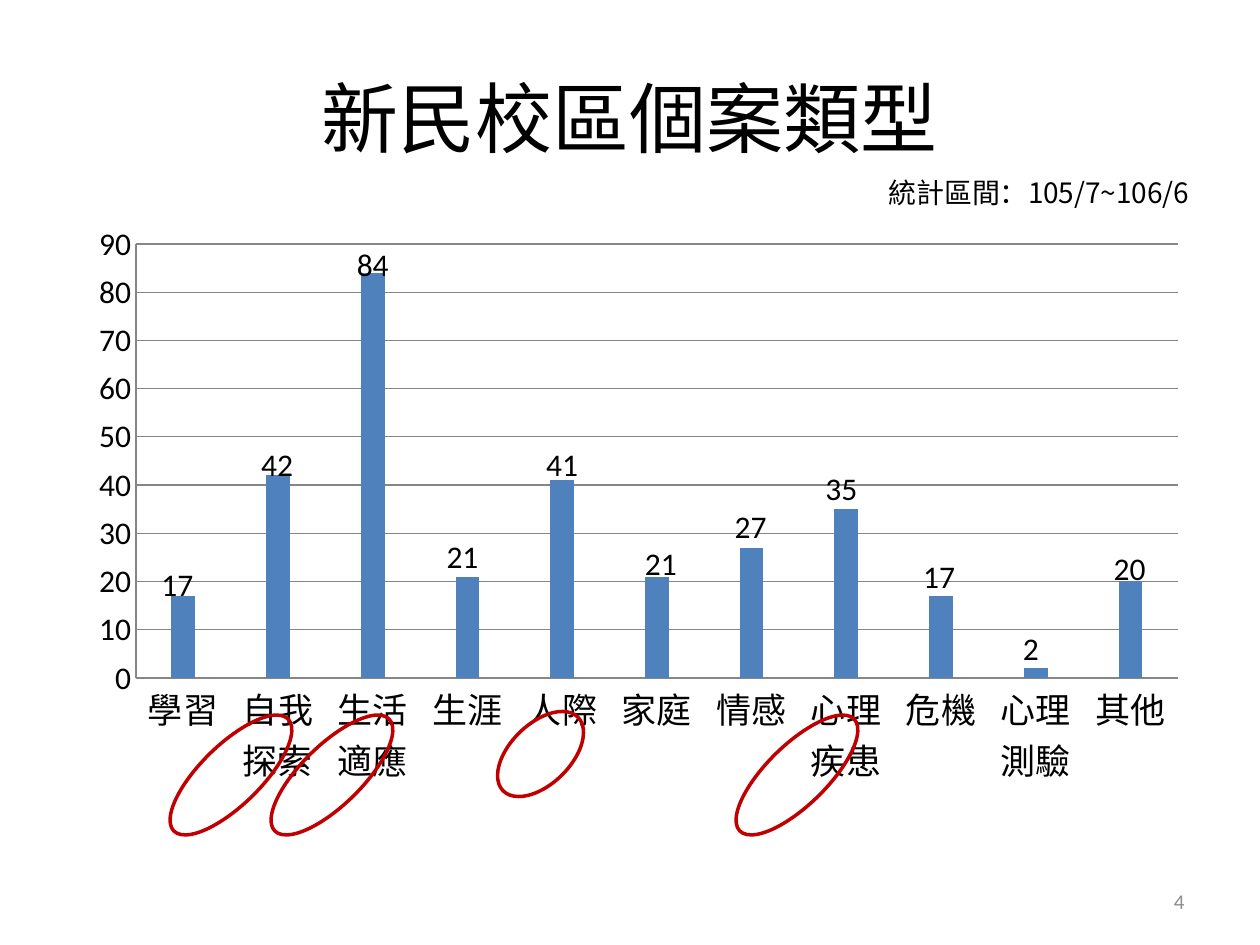
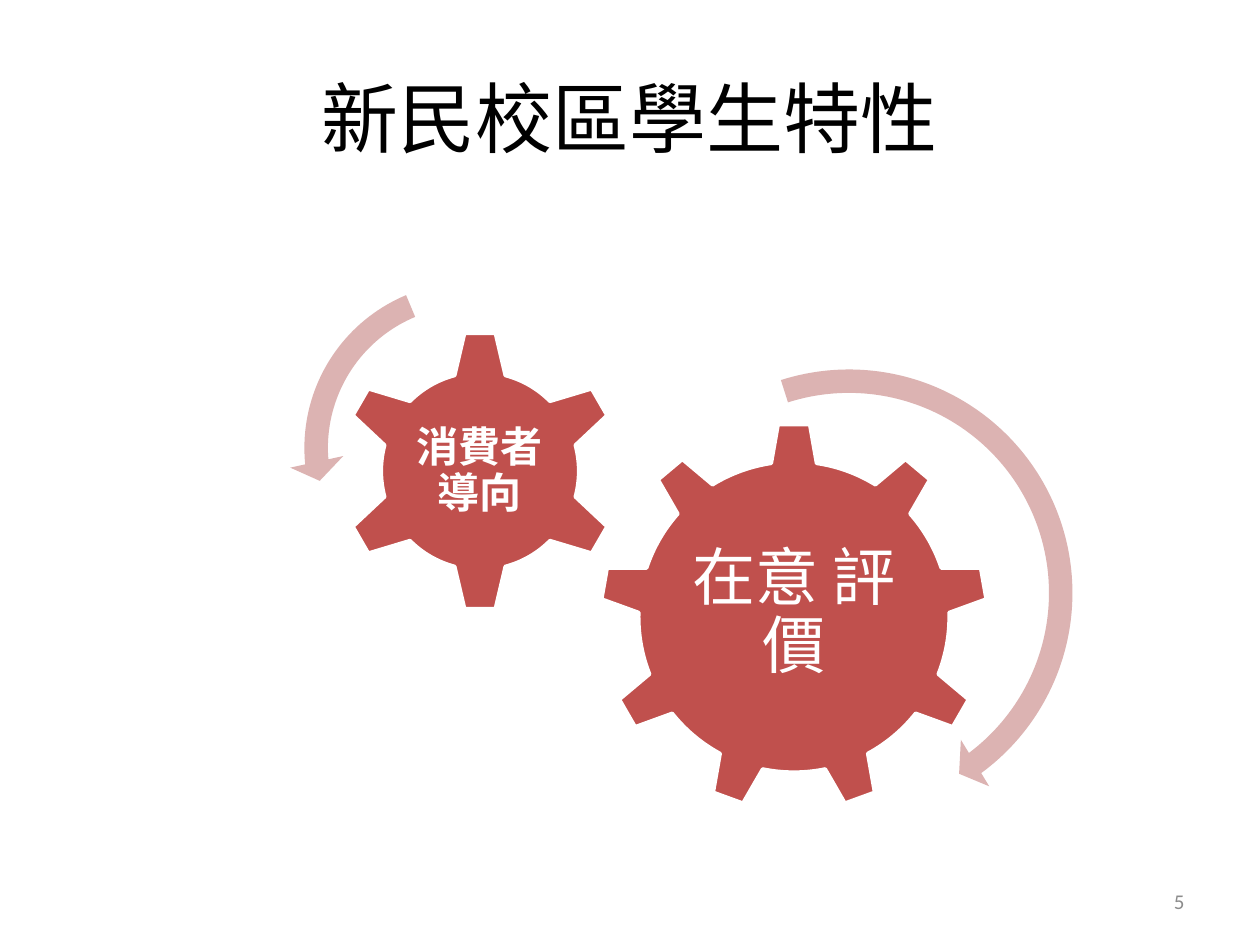
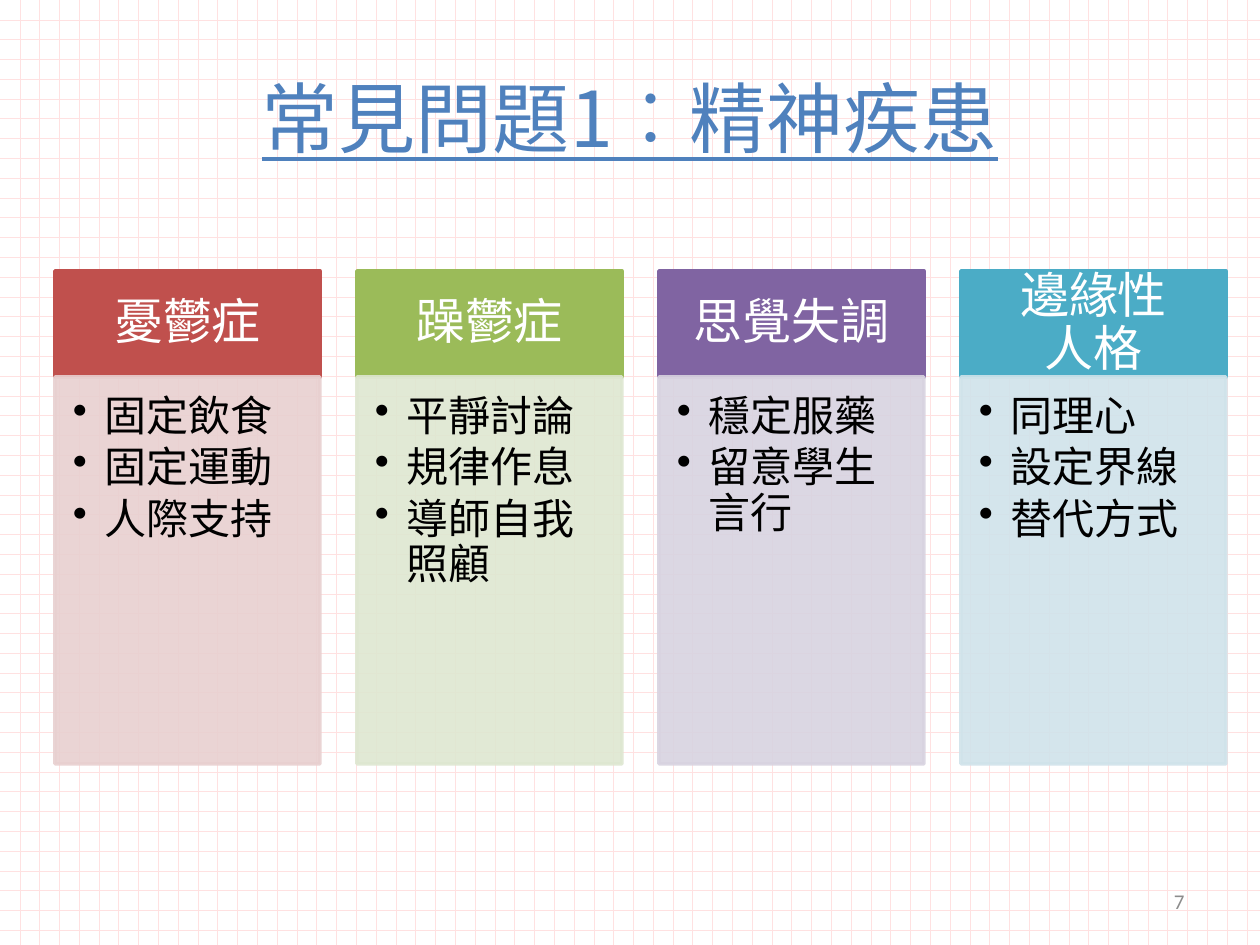
import pptx
import pptx.chart.data
import pptx.dml.color
import pptx.enum.chart
import pptx.enum.dml
import pptx.enum.shapes
import pptx.enum.text
import pptx.oxml
import pptx.oxml.ns
import pptx.util

RGB = pptx.dml.color.RGBColor
SHAPE = pptx.enum.shapes.MSO_SHAPE
ALIGN = pptx.enum.text.PP_ALIGN
ANCHOR = pptx.enum.text.MSO_ANCHOR
Pt = pptx.util.Pt
qn = pptx.oxml.ns.qn

SCALE = 914400 / 126  # EMU in one px
SC, JP, LATIN = "Noto Sans CJK SC", "Noto Sans CJK JP", "Calibri"

BLACK = RGB(0x00, 0x00, 0x00)
WHITE = RGB(0xFF, 0xFF, 0xFF)
GREY = RGB(0x8C, 0x8C, 0x8C)
GRID = RGB(0x86, 0x86, 0x86)
BLUE = RGB(0x4F, 0x81, 0xBD)
RED = RGB(0xC0, 0x50, 0x4D)
GREEN = RGB(0x9B, 0xBB, 0x59)
PURPLE = RGB(0x80, 0x64, 0xA2)
TEAL = RGB(0x4B, 0xAC, 0xC6)
RING = RGB(0xC0, 0x00, 0x00)
ARROW = RGB(0xDC, 0xB3, 0xB2)
DOTS = RGB(0xFF, 0xE1, 0xE1)
PALE_RED = RGB(0xE8, 0xD0, 0xD0)
PALE_GREEN = RGB(0xDE, 0xE7, 0xD1)
PALE_PURPLE = RGB(0xD8, 0xD3, 0xE0)
PALE_TEAL = RGB(0xD0, 0xE3, 0xEA)

TITLE_BOX = (63, 38, 1134, 157)
PAGE_BOX = (903, 876, 294, 50)
SPAN = ("統計區間：105/7~106/6", (876, 169, 348, 47))

CHART_BOX = (63, 220, 1134, 624)
PLOT = (73, 24, 1042, 434)
# type of case, count, label shift right and down from the inner end of its bar
CASES = [
    ("學習", 17, -6, -35), ("自我探索", 42, -1, -34), ("生活適應", 84, 0, -32),
    ("生涯", 21, -5, -43), ("人際", 41, 0, -39), ("家庭", 21, 4, -36),
    ("情感", 27, -1, -44), ("心理疾患", 35, -5, -44), ("危機", 17, -2, -43),
    ("心理測驗", 2, -5, -43), ("其他", 20, -1, -36),
]
RINGS = [(252, 745, 160), (151, 745, 160), (488, 724, 105), (717, 745, 160)]

GEARS = [
    (SHAPE.GEAR_9, (600, 423, 388, 388), "在意 評價", (678, 514, 232, 200),
     {"size": Pt(36)}),
    (SHAPE.GEAR_6, (339, 330, 282, 282), "消費者導向", (410, 402, 140, 140),
     {"size": Pt(24), "bold": True}),
]
# adjustments in percent
ARROWS = [
    (SHAPE.CIRCULAR_ARROW, (610, 354, 478, 478), (4.9, 312.6, 3206.9, 15136.1, 5.7)),
    (SHAPE.LEFT_CIRCULAR_ARROW, (289, 267, 362, 362), (6.5, 430, 10489.1, 14837.8, 7.5)),
]

CARDS = [
    ("憂鬱症", RED, PALE_RED, ["固定飲食", "固定運動", "人際支持"]),
    ("躁鬱症", GREEN, PALE_GREEN, ["平靜討論", "規律作息", "導師自我照顧"]),
    ("思覺失調", PURPLE, PALE_PURPLE, ["穩定服藥", "留意學生言行"]),
    ("邊緣性\v人格", TEAL, PALE_TEAL, ["同理心", "設定界線", "替代方式"]),
]
CARD_X, CARD_Y, CARD_W, STEP = 55, 271, 265, 302
HEAD_H, BODY_H = 106, 387


def px(n):
    return round(n * SCALE)


def place(box):
    return [px(n) for n in box]


def apply(item, values):
    for key, value in values.items():
        setattr(item, key, value)


def style(font, face, color, values):
    apply(font, {"name": face, **values})
    font.color.rgb = color


def write(shape, lines, face, color, font, para=None, frame=None, pads=None):
    """Fill a shape with one paragraph per line."""
    tf = shape.text_frame
    apply(tf, {"word_wrap": True, **(frame or {})})
    sides = ("margin_left", "margin_top", "margin_right", "margin_bottom")
    if pads:
        apply(tf, dict(zip(sides, place(pads))))
    for i, line in enumerate(lines):
        p = tf.add_paragraph() if i else tf.paragraphs[0]
        p.text = line
        apply(p, para or {})
        for run in p.runs:
            style(run.font, face, color, font)
            ea = pptx.oxml.parse_xml(
                f'<a:ea {pptx.oxml.ns.nsdecls("a")} typeface="{face}"/>')
            run.font._element.find(qn("a:latin")).addnext(ea)
    return tf


def text(slide, box, *args, **kw):
    return write(slide.shapes.add_textbox(*place(box)), *args, **kw)


def draw(slide, kind, box, fill=None, line=None):
    shape = slide.shapes.add_shape(kind, *place(box))
    shape.shadow.inherit = False
    for part, color in ((shape.fill, fill), (shape.line.fill, line)):
        if color is None:
            part.background()
        else:
            part.solid()
            part.fore_color.rgb = color
    if line is not None:
        shape.line.width = Pt(2)
    return shape


def start(deck, title, page, face=SC, color=BLACK, **font):
    slide = deck.slides.add_slide(deck.slide_layouts[6])
    middle = {"vertical_anchor": ANCHOR.MIDDLE}
    text(slide, TITLE_BOX, [title], face, color, {"size": Pt(44), **font},
         {"alignment": ALIGN.CENTER}, middle)
    text(slide, PAGE_BOX, [page], LATIN, GREY, {"size": Pt(12)},
         {"alignment": ALIGN.RIGHT}, middle)
    return slide


def layout(values, inner=False):
    """Manual chart layout from px values in the order x, y, w, h."""
    sizes = CHART_BOX[2:] * 2
    tags = '<c:layoutTarget val="inner"/>' if inner else ""
    if inner:
        tags += '<c:xMode val="edge"/><c:yMode val="edge"/>'
    for key, n, size in zip("xywh", values, sizes):
        tags += f'<c:{key} val="{n / size:.4f}"/>'
    return pptx.oxml.parse_xml(
        f'<c:layout {pptx.oxml.ns.nsdecls("c")}>'
        f"<c:manualLayout>{tags}</c:manualLayout></c:layout>")


def cases(slide):
    kinds = pptx.enum.chart
    data = pptx.chart.data.CategoryChartData()
    data.categories = [case[0] for case in CASES]
    data.add_series("Series 1", [case[1] for case in CASES])
    chart = slide.shapes.add_chart(
        kinds.XL_CHART_TYPE.COLUMN_STACKED, *place(CHART_BOX), data).chart
    apply(chart, {"has_legend": False, "has_title": False})
    style(chart.font, LATIN, BLACK, {"size": Pt(18)})

    plot = chart.plots[0]
    apply(plot, {"gap_width": 300, "overlap": 100, "vary_by_categories": False})
    bars = plot.series[0]
    bars.format.fill.solid()
    bars.format.fill.fore_color.rgb = BLUE

    cat, val = chart.category_axis, chart.value_axis
    apply(val, {"minimum_scale": 0, "maximum_scale": 90, "major_unit": 10,
                "has_major_gridlines": True})
    for axis in (cat, val):
        apply(axis, {"major_tick_mark": kinds.XL_TICK_MARK.NONE,
                     "minor_tick_mark": kinds.XL_TICK_MARK.NONE})
    for item in (cat, val, val.major_gridlines):
        item.format.line.color.rgb = GRID
        item.format.line.width = Pt(0.75)
    style(cat.tick_labels.font, SC, BLACK, {"size": Pt(20)})
    style(val.tick_labels.font, LATIN, BLACK, {"size": Pt(18)})

    for i in range(len(CASES)):
        label = bars.points[i].data_label
        style(label.font, LATIN, BLACK, {"size": Pt(18)})
        label.position = kinds.XL_LABEL_POSITION.INSIDE_END
    for label, case in zip(chart.element.iter(qn("c:dLbl")), CASES):
        label.insert(1, layout(case[2:]))
    area = next(chart.element.iter(qn("c:plotArea")))
    for old in area.findall(qn("c:layout")):
        area.remove(old)
    area.insert(0, layout(PLOT, True))

    for x, y, w in RINGS:
        draw(slide, SHAPE.OVAL, (x, y, w, 60), line=RING).rotation = 315.6
    line, box = SPAN
    text(slide, box, [line], SC, BLACK, {"size": Pt(16)})


def gears(slide):
    para = {"alignment": ALIGN.CENTER, "line_spacing": 0.9}
    for kind, box, line, room, font in GEARS:
        draw(slide, kind, box, RED, WHITE)
        text(slide, room, [line], SC, WHITE, font, para,
             {"vertical_anchor": ANCHOR.MIDDLE}, (5, 5, 5, 5))
    for kind, box, turns in ARROWS:
        arrow = draw(slide, kind, box, ARROW)
        for i, turn in enumerate(turns):
            arrow.adjustments[i] = turn / 100


def fade(shape):
    for color in shape._element.spPr.iter(qn("a:srgbClr")):
        color.append(pptx.oxml.parse_xml(
            f'<a:alpha {pptx.oxml.ns.nsdecls("a")} val="90000"/>'))


def bullet(p):
    props = p._p.get_or_add_pPr()
    apply_to = {"marL": px(32), "indent": -px(32)}
    for key, value in apply_to.items():
        props.set(key, str(value))
    props.append(pptx.oxml.parse_xml(
        f'<a:buChar {pptx.oxml.ns.nsdecls("a")} char="•"/>'))


def cards(slide):
    fill = slide.background.fill
    fill.patterned()
    fill.pattern = pptx.enum.dml.MSO_PATTERN.DOTTED_GRID
    fill.fore_color.rgb = DOTS
    fill.back_color.rgb = WHITE
    for i, (name, dark, pale, tips) in enumerate(CARDS):
        x = CARD_X + i * STEP
        head = draw(slide, SHAPE.RECTANGLE, (x, CARD_Y, CARD_W, HEAD_H), dark, dark)
        write(head, [name], JP, WHITE, {"size": Pt(28)},
              {"alignment": ALIGN.CENTER, "line_spacing": 0.9},
              {"vertical_anchor": ANCHOR.MIDDLE}, (28, 15, 28, 15))
        body = draw(slide, SHAPE.RECTANGLE,
                    (x, CARD_Y + HEAD_H, CARD_W, BODY_H), pale, pale)
        fade(body)
        tf = write(body, tips, SC, BLACK, {"size": Pt(24)},
                   {"alignment": ALIGN.LEFT, "line_spacing": 0.9,
                    "space_after": Pt(3.6)},
                   {"vertical_anchor": ANCHOR.TOP}, (18, 18, 24, 26))
        for p in tf.paragraphs:
            bullet(p)


def main():
    deck = pptx.Presentation()
    apply(deck, {"slide_width": px(1260), "slide_height": px(945)})
    cases(start(deck, "新民校區個案類型", "4"))
    gears(start(deck, "新民校區學生特性", "5"))
    cards(start(deck, "常見問題1︰精神疾患", "7", JP, BLUE, underline=True))
    deck.save("out.pptx")


if __name__ == "__main__":
    main()
